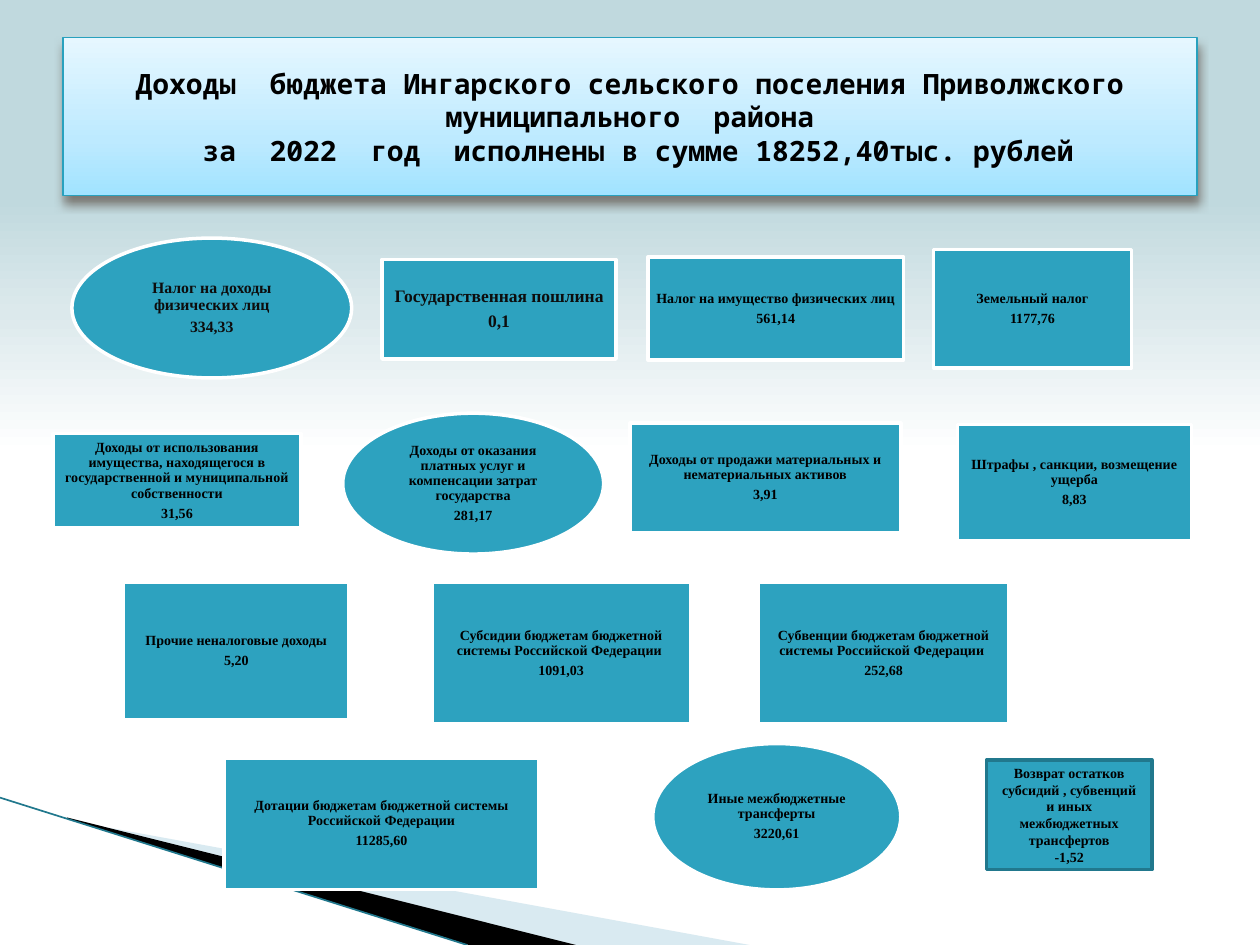
from lxml import etree
from pptx import Presentation
from pptx.dml.color import RGBColor
from pptx.enum import shapes, text
from pptx.oxml import ns
from pptx.util import Cm, Pt

TEAL = RGBColor(0x2D, 0xA2, 0xBF)
DARK_TEAL = RGBColor(0x21, 0x78, 0x8D)
TITLE_EDGE = RGBColor(0x28, 0xA1, 0xBE)
PALE_BLUE = RGBColor(0xA0, 0xCB, 0xDC)
WHITE = RGBColor(0xFF, 0xFF, 0xFF)
BLACK = RGBColor(0x00, 0x00, 0x00)
INK = RGBColor(0x0D, 0x0D, 0x0D)
SHADOW = RGBColor(0x4E, 0x3B, 0x30)

BACKGROUND = [(0, "C0D9DE"), (21, "C0D9DE"), (33, "DCE9EC"), (48, "FFFFFF"), (100, "FFFFFF")]
TITLE_FILL = [(0, "A1E3FF"), (35, "BDEAFF"), (100, "E6F7FF")]

TITLE = [
    "Доходы  бюджета Ингарского сельского поселения Приволжского муниципального  района",
    " за  2022  год  исполнены в сумме 18252,40тыс. рублей",
]

RECT = shapes.MSO_SHAPE.RECTANGLE
OVAL = shapes.MSO_SHAPE.OVAL

# Label, amount, shape, (left, top, width, height) in cm, text size, text colour
INCOME = [
    ("Налог на доходы физических лиц", "334,33", OVAL, (1.45, 4.8, 5.64, 2.82), 9, INK),
    ("Государственная пошлина", "0,1", RECT, (7.7, 5.23, 4.72, 2.01), 10, INK),
    ("Налог на имущество физических лиц", "561,14", RECT, (13.06, 5.18, 5.16, 2.08), 8, BLACK),
    ("Земельный налог", "1177,76", RECT, (18.82, 5.03, 3.99, 2.39), 8, BLACK),
    ("Доходы от использования имущества, находящегося в государственной и муниципальной "
     "собственности", "31,56", RECT, (1.07, 8.74, 5, 1.91), 8, BLACK),
    ("Доходы от оказания платных услуг и компенсации затрат государства", "281,17",
     OVAL, (6.91, 8.33, 5.26, 2.84), 8, BLACK),
    ("Доходы от продажи материальных и нематериальных активов", "3,91",
     RECT, (12.7, 8.53, 5.46, 2.21), 8, BLACK),
    ("Штрафы , санкции, возмещение ущерба", "8,83", RECT, (19.3, 8.56, 4.72, 2.34), 8, BLACK),
    ("Прочие неналоговые доходы", "5,20", RECT, (2.49, 11.73, 4.55, 2.79), 8, BLACK),
    ("Субсидии бюджетам бюджетной системы Российской Федерации ", "1091,03",
     RECT, (8.71, 11.73, 5.21, 2.87), 8, BLACK),
    ("Субвенции бюджетам бюджетной системы Российской Федерации ", "252,68",
     RECT, (15.29, 11.73, 5.05, 2.87), 8, BLACK),
    ("Дотации бюджетам бюджетной системы Российской Федерации", "11285,60",
     RECT, (4.52, 15.29, 6.35, 2.64), 8, BLACK),
    ("Иные межбюджетные трансферты", "3220,61", OVAL, (13.16, 14.99, 5, 2.95), 8, BLACK),
]
REFUND = ("Возврат остатков субсидий , субвенций и иных межбюджетных трансфертов", "-1,52",
          RECT, (19.89, 15.32, 3.33, 2.21), 8, BLACK)

# Corner points in cm, colour, opacity in percent
WEDGES = [
    ([(1.4, 16.54), (15.11, 19.05), (11.58, 19.05), (1.4, 16.51)], PALE_BLUE, 40),
    ([(1.35, 16.48), (11.61, 19.05), (9.45, 19.05), (1.37, 16.51)], BLACK, 100),
]
WEDGE_EDGE = (0, 16.08, 9.42, 19.05)


def sub(parent, tag, **attrs):
    return etree.SubElement(parent, ns.qn(tag), {k: str(v) for k, v in attrs.items()})


def set_gradient(fill, element, stops, angle):
    """Give a fill any number of (percent, hex) stops; the angle runs counter-clockwise."""
    fill.gradient()
    fill.gradient_angle = angle
    stop_list = element.find(".//" + ns.qn("a:gsLst"))
    for old in list(stop_list):
        stop_list.remove(old)
    for percent, color in stops:
        sub(sub(stop_list, "a:gs", pos=percent * 1000), "a:srgbClr", val=color)


def add_text(p, words, font, size, color):
    r = p.add_run()
    r.text = words
    r.font.name, r.font.size, r.font.bold = font, Pt(size), True
    r.font.color.rgb = color


def format_title(title):
    title.left, title.top, title.width, title.height = Cm(1.27), Cm(0.76), Cm(22.86), Cm(3.18)
    set_gradient(title.fill, title._element, TITLE_FILL, 90)
    title.line.color.rgb = TITLE_EDGE
    title.line.width = Pt(0.75)
    effects = sub(title._element.spPr, "a:effectLst")
    shadow = sub(effects, "a:outerShdw", blurRad=Pt(6), dist=Pt(4), dir=5400000, rotWithShape=0)
    sub(sub(shadow, "a:srgbClr", val=SHADOW), "a:alpha", val=60000)
    tf = title.text_frame
    tf.auto_size = text.MSO_AUTO_SIZE.NONE
    tf.vertical_anchor = text.MSO_ANCHOR.MIDDLE
    p = tf.paragraphs[0]
    p.alignment = text.PP_ALIGN.CENTER
    for i, line in enumerate(TITLE):
        if i:
            p.add_line_break()
        add_text(p, line, "Noto Sans Mono", 16, BLACK)


def add_wedges(s):
    for points, color, opacity in WEDGES:
        start, *rest = [(Cm(x), Cm(y)) for x, y in points]
        builder = s.shapes.build_freeform(*start)
        builder.add_line_segments(rest)
        wedge = builder.convert_to_shape()
        wedge.shadow.inherit = False
        wedge.fill.solid()
        wedge.fill.fore_color.rgb = color
        wedge.line.fill.background()
        if opacity < 100:
            sub(wedge._element.spPr.find(".//" + ns.qn("a:srgbClr")), "a:alpha", val=opacity * 1000)
    edge = s.shapes.add_connector(shapes.MSO_CONNECTOR.STRAIGHT, *map(Cm, WEDGE_EDGE))
    edge.line.color.rgb = DARK_TEAL
    edge.line.width = Pt(0.95)
    sub(edge._element.spPr, "a:effectLst")


def add_income(s, item, edge=WHITE, margins=(0.08, 0.08), line_spacing=0.9, gap=0.35):
    """Margins are (side, top and bottom) in cm; gap is a share of the text size."""
    label, amount, kind, place, size, color = item
    sp = s.shapes.add_shape(kind, *map(Cm, place))
    sp.shadow.inherit = False
    sp.fill.solid()
    sp.fill.fore_color.rgb = TEAL
    sp.line.color.rgb = edge
    sp.line.width = Pt(2)
    tf = sp.text_frame
    tf.word_wrap = True
    tf.vertical_anchor = text.MSO_ANCHOR.MIDDLE
    tf.margin_left = tf.margin_right = Cm(margins[0])
    tf.margin_top = tf.margin_bottom = Cm(margins[1])
    for p, words in ((tf.paragraphs[0], label), (tf.add_paragraph(), amount)):
        p.alignment = text.PP_ALIGN.CENTER
        p.line_spacing = line_spacing
        p.space_after = Pt(size * gap)
        add_text(p, words, "Times New Roman", size, color)


def main():
    prs = Presentation()
    prs.slide_width, prs.slide_height = Cm(25.4), Cm(19.05)
    s = prs.slides.add_slide(prs.slide_layouts[5])
    set_gradient(s.background.fill, s._element, BACKGROUND, 270)
    format_title(s.shapes.title)
    add_wedges(s)
    for item in INCOME:
        add_income(s, item)
    add_income(s, REFUND, edge=DARK_TEAL, margins=(0.25, 0.13), line_spacing=1.0, gap=0)
    prs.save("out.pptx")


if __name__ == "__main__":
    main()
